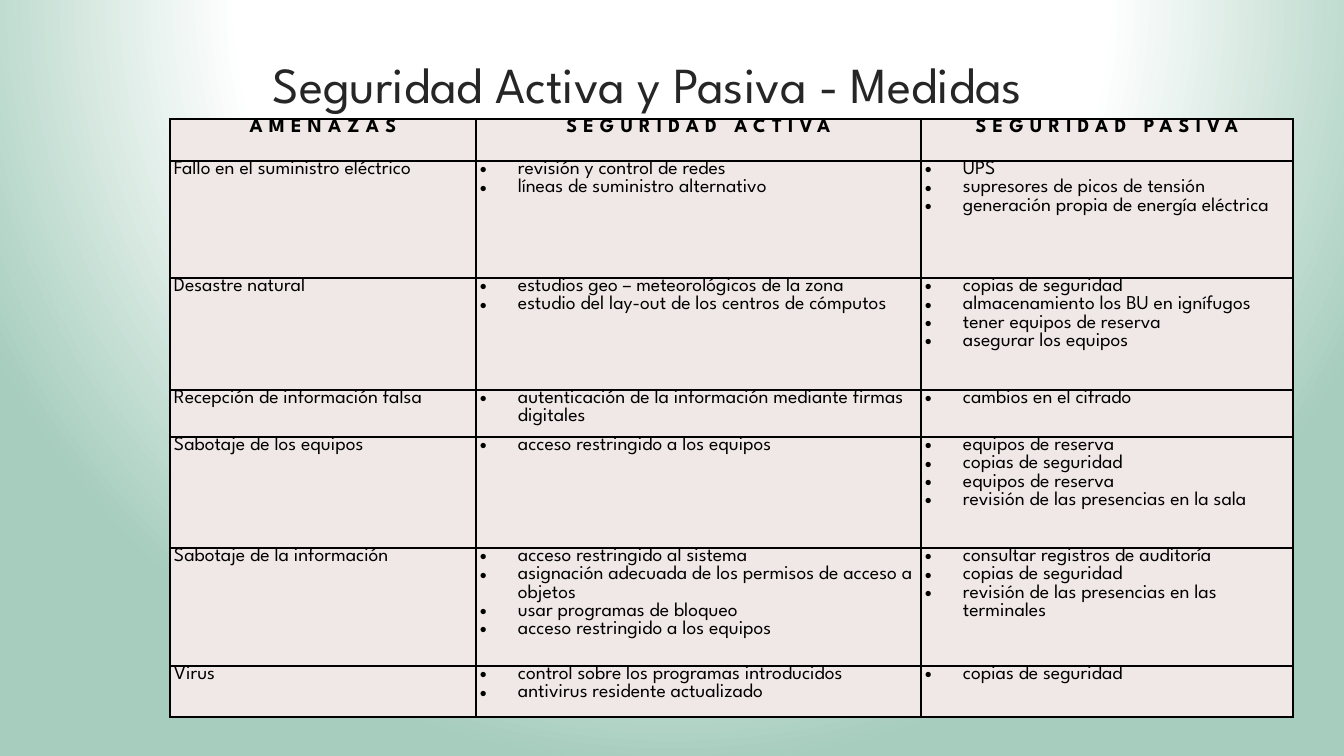
import pptx
import pptx.dml.color
import pptx.enum.text
import pptx.oxml
import pptx.oxml.ns
import pptx.util

RGBColor = pptx.dml.color.RGBColor
ALIGN = pptx.enum.text.PP_ALIGN
ANCHOR = pptx.enum.text.MSO_ANCHOR
Pt = pptx.util.Pt

BLACK = RGBColor(0x00, 0x00, 0x00)
CHARCOAL = RGBColor(0x26, 0x26, 0x26)
WHITE = RGBColor(0xFF, 0xFF, 0xFF)
GREEN = RGBColor(0xA6, 0xCD, 0xBD)
BLUSH = RGBColor(0xF0, 0xE8, 0xE7)
FONT = "League Spartan"
PX = 914400 / 100.8  # EMU per px
NS = pptx.oxml.ns.nsdecls("a")


def px(n):
    return pptx.util.Emu(round(n * PX))


def write(p, text, **font):
    r = p.add_run()
    r.text = text
    r.font.color.rgb = font.pop("color")
    for name, value in {"name": FONT, **font}.items():
        setattr(r.font, name, value)
    return r


prs = pptx.Presentation()
prs.slide_width, prs.slide_height = px(1344), px(756)
s = prs.slides.add_slide(prs.slide_layouts[6])

# Background: white glow fading to green
s.background.fill.solid()
solid = s.element.find(".//" + pptx.oxml.ns.qn("a:solidFill"))
stops = "".join(
    f'<a:gs pos="{pos * 1000}"><a:srgbClr val="{color}"/></a:gs>'
    for pos, color in [(0, WHITE), (56, WHITE), (100, GREEN)]
)
solid.getparent().replace(solid, pptx.oxml.parse_xml(
    f'<a:gradFill {NS} rotWithShape="1"><a:gsLst>{stops}</a:gsLst><a:path path="circle">'
    '<a:fillToRect l="50000" t="-80000" r="50000" b="180000"/></a:path></a:gradFill>'
))

# Title
sp = s.shapes.add_textbox(px(263), px(37), px(983), px(92))
tf = sp.text_frame
tf.word_wrap = True
tf.vertical_anchor = ANCHOR.MIDDLE
write(tf.paragraphs[0], "Seguridad Activa y Pasiva - Medidas", size=Pt(36), color=CHARCOAL)

# Table content: threat, active measures, passive measures
HEADERS = ["AMENAZAS", "SEGURIDAD ACTIVA", "SEGURIDAD PASIVA"]
THREATS = [
    ("Fallo en el suministro eléctrico",
     ["revisión y control de redes", "líneas de suministro alternativo"],
     ["UPS", "supresores de picos de tensión", "generación propia de energía eléctrica"]),
    ("Desastre natural",
     ["estudios geo – meteorológicos de la zona",
      "estudio del lay-out de los centros de cómputos"],
     ["copias de seguridad", "almacenamiento los BU en ignífugos",
      "tener equipos de reserva", "asegurar los equipos"]),
    ("Recepción de información falsa",
     ["autenticación de la información mediante firmas digitales"],
     ["cambios en el cifrado"]),
    ("Sabotaje de los equipos",
     ["acceso restringido a los equipos"],
     ["equipos de reserva", "copias de seguridad", "equipos de reserva",
      "revisión de las presencias en la sala"]),
    ("Sabotaje de la información",
     ["acceso restringido al sistema",
      "asignación adecuada de los permisos de acceso a objetos",
      "usar programas de bloqueo", "acceso restringido a los equipos"],
     ["consultar registros de auditoría", "copias de seguridad",
      "revisión de las presencias en las terminales"]),
    ("Virus",
     ["control sobre los programas introducidos", "antivirus residente actualizado"],
     ["copias de seguridad"]),
]
COLS = [306, 445, 372]
ROWS = [42, 117, 112, 47, 111, 118, 51]

table = s.shapes.add_table(
    len(ROWS), len(COLS), px(170), px(119), px(sum(COLS)), px(sum(ROWS))
).table
table.first_row = table.horz_banding = False
for col, width in zip(table.columns, COLS):
    col.width = px(width)
for row, height in zip(table.rows, ROWS):
    row.height = px(height)

CELL = {"margin_left": px(4), "margin_right": px(4), "margin_top": 0,
        "margin_bottom": 0, "vertical_anchor": ANCHOR.TOP}
for i, row in enumerate([HEADERS, *THREATS]):
    for j, content in enumerate(row):
        cell = table.cell(i, j)
        for name, value in CELL.items():
            setattr(cell, name, value)

        # Text: spaced header, plain threat or bulleted measures
        lines = [content] if isinstance(content, str) else content
        for k, line in enumerate(lines):
            tf = cell.text_frame
            p = tf.add_paragraph() if k else tf.paragraphs[0]
            r = write(p, line, size=Pt(14), bold=i == 0, color=BLACK)
            if i == 0:
                p.alignment = ALIGN.CENTER
                r.font._element.set("spc", "440")
            elif j > 0:
                pPr = p._p.get_or_add_pPr()
                pPr.set("marL", str(px(38)))
                pPr.set("indent", str(px(-38)))
                for xml in (f'<a:buFont {NS} typeface="Arial"/>', f'<a:buChar {NS} char="•"/>'):
                    pPr.append(pptx.oxml.parse_xml(xml))

        # Borders come before the fill in the cell properties
        tcPr = cell._tc.get_or_add_tcPr()
        for side in "LRTB":
            tcPr.append(pptx.oxml.parse_xml(
                f'<a:ln{side} {NS} w="{Pt(1)}"><a:solidFill><a:srgbClr val="{BLACK}"/>'
                f'</a:solidFill></a:ln{side}>'
            ))
        cell.fill.solid()
        cell.fill.fore_color.rgb = BLUSH

prs.save("out.pptx")
